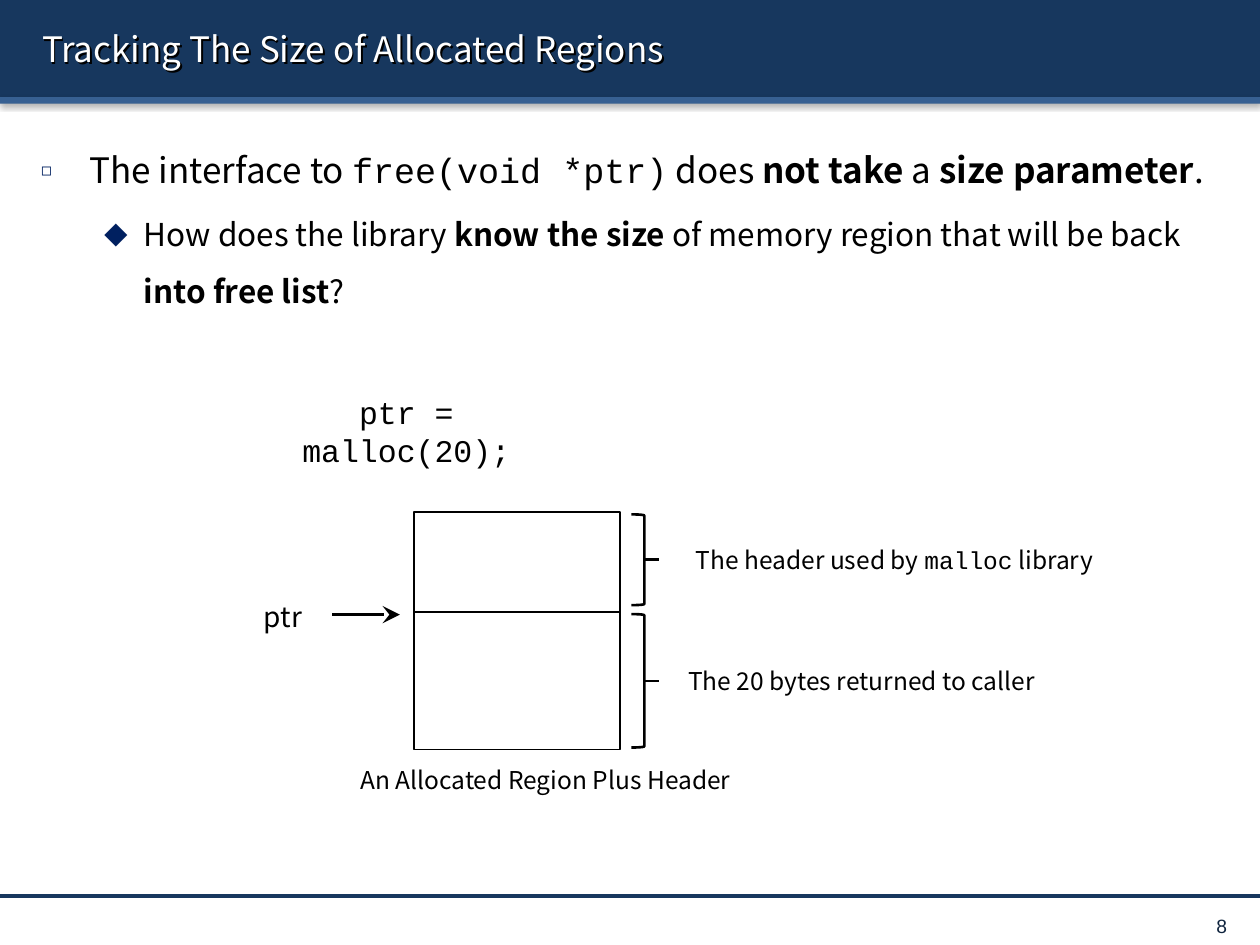
from lxml.etree import SubElement
from pptx import Presentation
from pptx.dml.color import RGBColor
from pptx.enum.shapes import MSO_CONNECTOR, MSO_SHAPE
from pptx.enum.text import MSO_ANCHOR, PP_ALIGN
from pptx.oxml.ns import qn
from pptx.util import Cm, Pt

NAVY = RGBColor(0x17, 0x37, 0x5E)
BLUE = RGBColor(0x37, 0x60, 0x92)
BULLET = RGBColor(0x00, 0x20, 0x60)
NUMBER = RGBColor(0x0F, 0x24, 0x3E)
BLACK = RGBColor(0, 0, 0)
WHITE = RGBColor(255, 255, 255)

SANS, MONO = "Noto Sans CJK KR", "Courier New"
PLAIN, BOLD, CODE = (SANS, False), (SANS, True), (MONO, False)

SLIDE_WIDTH, SLIDE_HEIGHT = 25.4, 19.05
LABEL_HEIGHT = 0.86

TITLE = [("Tracking The Size of Allocated Regions", PLAIN)]
BULLETS = [
    {"mark": "◻", "mark_percent": 50, "size": 20, "left": 0.97, "hanging": 0.97, "before": 0,
     "runs": [("The interface to ", PLAIN), ("free(void *ptr)", CODE), (" does ", PLAIN),
              ("not take", BOLD), (" a ", PLAIN), ("size parameter", BOLD), (".", PLAIN)]},
    {"mark": "◆", "mark_percent": 75, "size": 18, "left": 2.07, "hanging": 0.79, "before": 3.6,
     "runs": [("How does the library ", PLAIN), ("know the size", BOLD),
              (" of memory region that will be back ", PLAIN),
              ("into free list", BOLD), ("?", PLAIN)]},
]
BARS = [(0, 1.96, NAVY), (1.96, 0.13, BLUE)]
REGION_LEFT, REGION_TOP, REGION_WIDTH = 8.34, 10.32, 4.16
REGIONS = [
    {"height": 2.02, "bracket": (10.37, 1.83), "label_width": 8.94,
     "runs": [("The header used by ", PLAIN), ("malloc", CODE), (" library", PLAIN)]},
    {"height": 2.77, "bracket": (12.38, 2.69), "label_width": 7.62,
     "runs": [("The 20 bytes returned to caller", PLAIN)]},
]
BRACKET_LEFT, BRACKET_WIDTH, TICK_LENGTH = 12.73, 0.26, 0.3
LABEL_LEFT = 13.56
FREE_LABELS = [
    ([("ptr", PLAIN)], 4.7, 11.96, 2.01, 16),
    ([("An Allocated Region Plus Header", PLAIN)], 6.58, 15.29, 8.84, 14),
    ([("ptr = malloc(20);", CODE)], 4.74, 7.8, 6.9, 18),
]


def add_shadow(shape, blur, distance, degrees, opacity):
    effects = SubElement(shape._element.spPr, qn("a:effectLst"))
    shadow = SubElement(effects, qn("a:outerShdw"), blurRad=str(Pt(blur)),
                        dist=str(Pt(distance)), dir=str(degrees * 60000),
                        algn="t", rotWithShape="0")
    color = SubElement(shadow, qn("a:srgbClr"), val=str(BLACK))
    SubElement(color, qn("a:alpha"), val=str(opacity * 1000))


def add_runs(paragraph, runs, size, color):
    for text, (font_name, bold) in runs:
        run = paragraph.add_run()
        run.text = text
        run.font.name = font_name
        run.font.bold = bold
        run.font.size = Pt(size)
        run.font.color.rgb = color


def add_text(slide, runs, left, top, width, height, size, color=BLACK, align=PP_ALIGN.CENTER):
    box = slide.shapes.add_textbox(Cm(left), Cm(top), Cm(width), Cm(height))
    box.text_frame.word_wrap = True
    paragraph = box.text_frame.paragraphs[0]
    paragraph.alignment = align
    add_runs(paragraph, runs, size, color)
    return box


def add_shape(slide, kind, left, top, width, height, fill=None, line=None, line_width=1):
    shape = slide.shapes.add_shape(kind, Cm(left), Cm(top), Cm(width), Cm(height))
    shape.shadow.inherit = False
    if fill is None:
        shape.fill.background()
    else:
        shape.fill.solid()
        shape.fill.fore_color.rgb = fill
    if line is None:
        shape.line.fill.background()
    else:
        shape.line.color.rgb = line
        shape.line.width = Pt(line_width)
    return shape


def add_line(slide, left, right, y, color=BLACK, width=1.5, arrow=False):
    connector = slide.shapes.add_connector(
        MSO_CONNECTOR.STRAIGHT, Cm(left), Cm(y), Cm(right), Cm(y))
    connector.line.color.rgb = color
    connector.line.width = Pt(width)
    if arrow:
        SubElement(connector.line._get_or_add_ln(), qn("a:tailEnd"), type="stealth",
                   w="lg", len="lg")
    SubElement(connector._element.spPr, qn("a:effectLst"))


def add_frame(slide):
    for top, height, color in BARS:
        bar = add_shape(slide, MSO_SHAPE.RECTANGLE, 0, top, SLIDE_WIDTH, height, color)
        bar.shadow.inherit = True
        add_shadow(bar, 3.1, 1.6, 90, 38)
    add_line(slide, 0, SLIDE_WIDTH, 18.06, NAVY, 2)
    title = add_text(slide, TITLE, 0.6, 0.17, 24.41, 1.63, 20, WHITE, PP_ALIGN.LEFT)
    title.text_frame.vertical_anchor = MSO_ANCHOR.MIDDLE
    add_shadow(title, 0, 1.4, 45, 100)
    add_text(slide, [("8", ("Arial", False))], 22.12, 18.31, 2.87, 0.61, 11, NUMBER,
             PP_ALIGN.RIGHT)


def add_bullets(slide):
    box = slide.shapes.add_textbox(Cm(0.58), Cm(2.44), Cm(24.41), Cm(15.29))
    frame = box.text_frame
    frame.word_wrap = True
    for level, item in enumerate(BULLETS):
        paragraph = frame.add_paragraph() if level else frame.paragraphs[0]
        paragraph.level = level
        paragraph.line_spacing = 1.5
        paragraph.space_before = Pt(item["before"])
        properties = paragraph._p.get_or_add_pPr()
        properties.set("marL", str(Cm(item["left"])))
        properties.set("indent", str(-Cm(item["hanging"])))
        color = SubElement(properties, qn("a:buClr"))
        SubElement(color, qn("a:srgbClr"), val=str(BULLET))
        SubElement(properties, qn("a:buSzPct"), val=str(item["mark_percent"] * 1000))
        SubElement(properties, qn("a:buFont"), typeface=SANS)
        SubElement(properties, qn("a:buChar"), char=item["mark"])
        add_runs(paragraph, item["runs"], item["size"], BLACK)


def add_memory_diagram(slide):
    top = REGION_TOP
    bracket_right = BRACKET_LEFT + BRACKET_WIDTH
    for region in REGIONS:
        add_shape(slide, MSO_SHAPE.RECTANGLE, REGION_LEFT, top, REGION_WIDTH,
                  region["height"], WHITE, BLACK)
        top += region["height"]
        bracket_top, bracket_height = region["bracket"]
        add_shape(slide, MSO_SHAPE.RIGHT_BRACKET, BRACKET_LEFT, bracket_top, BRACKET_WIDTH,
                  bracket_height, None, BLACK, 1.5)
        middle = bracket_top + bracket_height / 2
        add_line(slide, bracket_right, bracket_right + TICK_LENGTH, middle)
        add_text(slide, region["runs"], LABEL_LEFT, middle - LABEL_HEIGHT / 2,
                 region["label_width"], LABEL_HEIGHT, 14)
    add_line(slide, 6.7, 8.06, 12.39, arrow=True)
    for runs, left, label_top, width, size in FREE_LABELS:
        add_text(slide, runs, left, label_top, width, LABEL_HEIGHT, size)


def main():
    presentation = Presentation()
    presentation.slide_width = Cm(SLIDE_WIDTH)
    presentation.slide_height = Cm(SLIDE_HEIGHT)
    slide = presentation.slides.add_slide(presentation.slide_layouts[6])
    add_frame(slide)
    add_bullets(slide)
    add_memory_diagram(slide)
    presentation.save("out.pptx")


if __name__ == "__main__":
    main()
